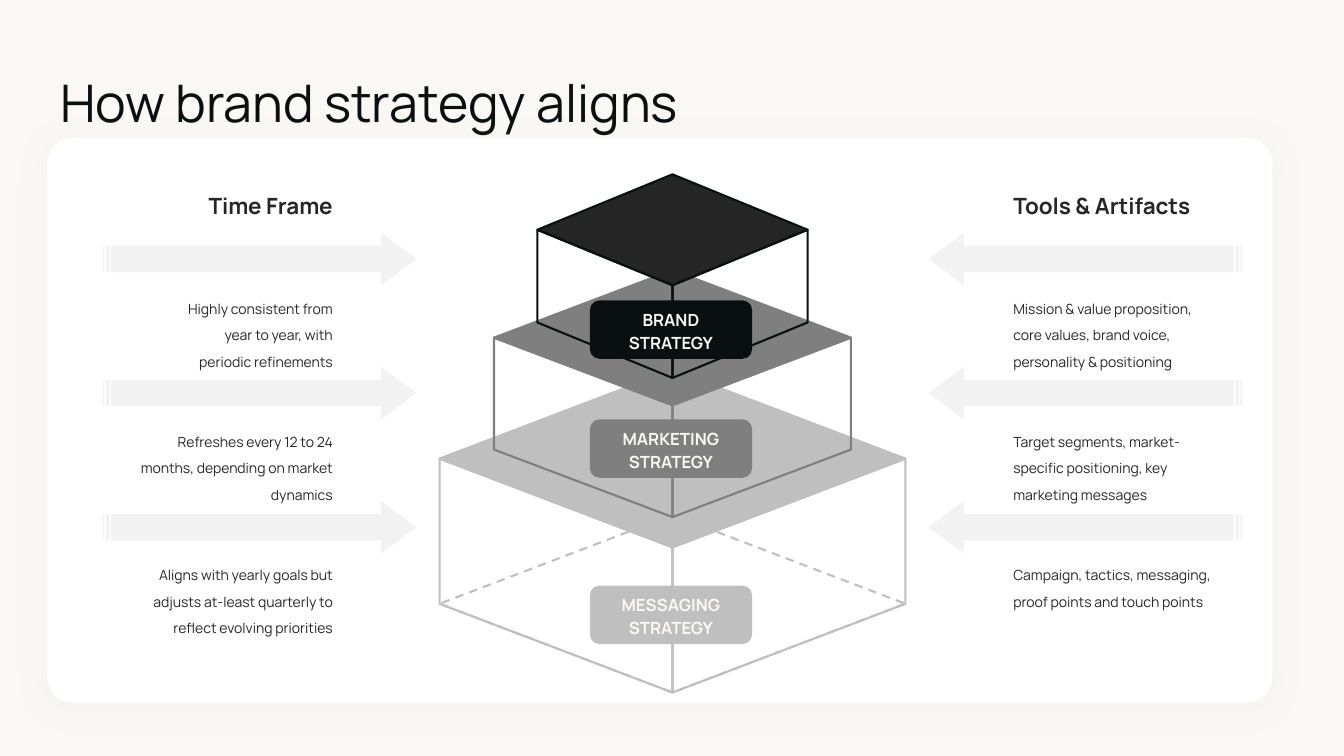
"""Build the slide that shows how brand, marketing and messaging strategy align."""
from lxml.etree import SubElement
from pptx import Presentation
from pptx.dml.color import RGBColor
from pptx.enum.dml import MSO_LINE
from pptx.enum.shapes import MSO_SHAPE
from pptx.enum.text import MSO_ANCHOR, MSO_AUTO_SIZE, PP_ALIGN
from pptx.oxml.ns import qn
from pptx.util import Inches, Pt

INK, CHARCOAL, IVORY = "09100F", "262626", "F9F8F5"


def paint(shape, fill=None, line=None):
    shape.shadow.inherit = False
    if fill:
        shape.fill.solid()
        shape.fill.fore_color.rgb = RGBColor.from_string(fill)
    else:
        shape.fill.background()
    if line:
        shape.line.color.rgb = RGBColor.from_string(line)
        shape.line.width = Pt(1.5)
    else:
        shape.line.fill.background()


def write(frame, text, size, color, align, bold=False, spacing=1.0, anchor=MSO_ANCHOR.MIDDLE):
    frame.text = text
    frame.word_wrap = True
    frame.vertical_anchor = anchor
    frame.margin_left = frame.margin_top = frame.margin_right = frame.margin_bottom = 0
    for paragraph in frame.paragraphs:
        paragraph.alignment = align
        paragraph.line_spacing = spacing
        paragraph.font.name = "Manrope"
        paragraph.font.size = Pt(size)
        paragraph.font.bold = bold
        paragraph.font.color.rgb = RGBColor.from_string(color)


prs = Presentation()
prs.slide_width, prs.slide_height = Inches(13.33), Inches(7.5)
slide = prs.slides.add_slide(prs.slide_layouts[5])
slide.background.fill.solid()
slide.background.fill.fore_color.rgb = RGBColor.from_string(IVORY)
shapes = slide.shapes

title = shapes.title
title.left, title.top, title.width, title.height = Inches(0.6), Inches(0.67), Inches(10.74), Inches(0.68)
write(title.text_frame, "How brand strategy aligns", 37, INK, PP_ALIGN.LEFT)

card = shapes.add_shape(MSO_SHAPE.ROUNDED_RECTANGLE, Inches(0.47), Inches(1.37), Inches(12.15), Inches(5.6))
card.adjustments[0] = 0.045
paint(card, "FFFFFF")
effects = card._element.spPr.find(qn("a:effectLst"))
glow = SubElement(effects, qn("a:outerShdw"), blurRad=str(Pt(24)), dist=str(Pt(4)), dir="5400000", rotWithShape="0")
glow_color = SubElement(glow, qn("a:srgbClr"), val="BFBFBF")
SubElement(glow_color, qn("a:alpha"), val="10000")

columns = [
    ("Time Frame", 1.3, 2, 1.02, PP_ALIGN.RIGHT, [
        "Highly consistent from\nyear to year, with\nperiodic refinements",
        "Refreshes every 12 to 24 months, depending on market dynamics",
        "Aligns with yearly goals but adjusts at-least quarterly to reflect evolving priorities",
    ]),
    ("Tools & Artifacts", 10.05, 2.51, 9.21, PP_ALIGN.LEFT, [
        "Mission & value proposition, core values, brand voice, personality & positioning",
        "Target segments, market-specific positioning, key marketing messages",
        "Campaign, tactics, messaging, proof points and touch points",
    ]),
]
for heading, text_left, heading_width, arrow_left, align, notes in columns:
    header = shapes.add_textbox(Inches(text_left), Inches(1.9), Inches(heading_width), Inches(0.27))
    write(header.text_frame, heading, 16, CHARCOAL, align, bold=True)
    for row, note in enumerate(notes):
        arrow = shapes.add_shape(MSO_SHAPE.STRIPED_RIGHT_ARROW, Inches(arrow_left), Inches(2.31 + 1.33 * row),
                                 Inches(3.11), Inches(0.52))
        arrow.adjustments[0], arrow.adjustments[1] = 0.5, 0.676
        paint(arrow, "F2F2F2")
        if align == PP_ALIGN.LEFT:
            arrow._element.spPr.xfrm.set("flipH", "1")
        detail = shapes.add_textbox(Inches(text_left), Inches(2.89 + 1.32 * row), Inches(2), Inches(0.69))
        write(detail.text_frame, note, 10, CHARCOAL, align, spacing=1.56, anchor=MSO_ANCHOR.TOP)
        detail.text_frame.auto_size = MSO_AUTO_SIZE.SHAPE_TO_FIT_TEXT

center = 6.67
tiers = [
    ("MESSAGING", 2.31, 4.55, 0.88, 1.44, "BFBFBF", "BFBFBF", 5.81),
    ("MARKETING", 1.77, 3.35, 0.67, 1.11, "7F7F7F", "7F7F7F", 4.16),
    ("BRAND", 1.34, 2.28, 0.55, 0.92, CHARCOAL, INK, 2.98),
]
for name, half, rim, rise, depth, lid_color, edge_color, label_top in tiers:
    left, right, front, base = center - half, center + half, rim + rise, rim + depth
    lid = [(right, rim), (center, front), (left, rim), (center, rim - rise)]
    faces = [(lid, lid_color, False)]
    if name == "MESSAGING":
        floor = [(x, y + depth) for x, y in lid]
        faces.insert(0, (floor, None, True))
    for side in (left, right):
        wall = [(center, base + rise), (side, base), (side, rim), (center, front)]
        faces.append((wall, None, False))
    for corners, fill, dashed in faces:
        points = [(Inches(x), Inches(y)) for x, y in corners]
        builder = shapes.build_freeform(*points[0])
        builder.add_line_segments(points[1:], close=True)
        face = builder.convert_to_shape()
        paint(face, fill, edge_color)
        if dashed:
            face.line.dash_style = MSO_LINE.DASH

for name, *_, label_color, label_top in tiers:
    label = shapes.add_shape(MSO_SHAPE.ROUNDED_RECTANGLE, Inches(5.85), Inches(label_top), Inches(1.61), Inches(0.58))
    label.adjustments[0] = 0.167
    paint(label, label_color)
    write(label.text_frame, f"{name}\nSTRATEGY", 12, IVORY, PP_ALIGN.CENTER, bold=True, spacing=1.15)

prs.save("out.pptx")
